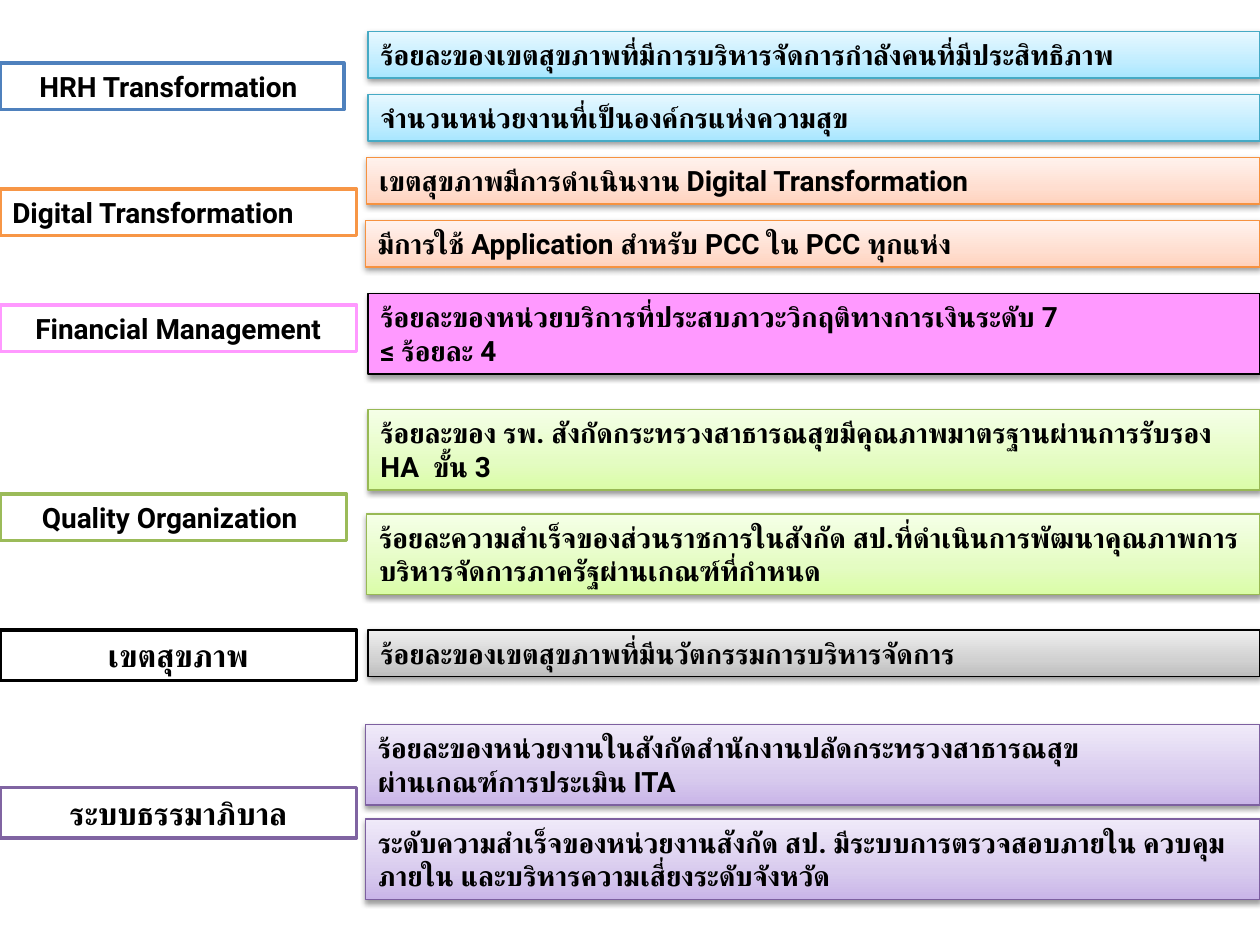
"""Build a slide that pairs management themes with their indicators."""
from copy import deepcopy

from lxml import etree
from pptx import Presentation
from pptx.dml.color import RGBColor
from pptx.enum import shapes, text
from pptx.oxml import ns
from pptx import util as u

WIDTH, HEIGHT = 10, 7.5
FONT = "Roboto"
BLACK, WHITE = "000000", "FFFFFF"
LEFT, CENTER = text.PP_ALIGN.LEFT, text.PP_ALIGN.CENTER
LINE_HEIGHT, PADDING = 0.27, 0.1

BLUE = ("A7E6FF", "C1EDFF", "E7F8FF")
ORANGE = ("FFD2BD", "FFDED0", "FFF2ED")
PINK = ("FF99FF",)
GREEN = ("DAFDA7", "E4FCC2", "F5FFE7")
GRAY = ("BDBDBD", "D1D1D1", "EEEEEE")
PURPLE = ("C9B5E8", "D8CBEE", "F0EAF9")
STOPS = (0, 0.35, 1)

# Theme: label, top, width, height, size, alignment, fill, line colour, line width
THEMES = [
    ("HRH Transformation ", 0.5, 2.73, 0.37, 16, CENTER, WHITE, "4F81BD", 2),
    ("Digital Transformation", 1.5, 2.83, 0.37, 16, LEFT, WHITE, "F79646", 2),
    ("Financial Management", 2.42, 2.83, 0.37, 16, CENTER, None, "FF99FF", 2.25),
    ("Quality Organization ", 3.92, 2.75, 0.37, 16, CENTER, WHITE, "9BBB59", 2),
    ("เขตสุขภาพ", 5, 2.83, 0.4, 18, CENTER, WHITE, BLACK, 2),
    ("ระบบธรรมาภิบาล", 6.25, 2.83, 0.4, 18, CENTER, WHITE, "8064A2", 2),
]

# Indicator: wording, left, top, rows of text, fill colours, line colour
INDICATORS = [
    ("ร้อยละของเขตสุขภาพที่มีการบริหารจัดการกำลังคนที่มีประสิทธิภาพ",
     2.92, 0.25, 1, BLUE, "46AAC5"),
    ("จำนวนหน่วยงานที่เป็นองค์กรแห่งความสุข", 2.92, 0.75, 1, BLUE, "46AAC5"),
    ("เขตสุขภาพมีการดำเนินงาน Digital Transformation",
     2.91, 1.25, 1, ORANGE, "F69240"),
    ("มีการใช้ Application สำหรับ PCC ใน PCC ทุกแห่ง",
     2.9, 1.75, 1, ORANGE, "F69240"),
    ("ร้อยละของหน่วยบริการที่ประสบภาวะวิกฤติทางการเงินระดับ 7\n≤ ร้อยละ 4",
     2.92, 2.33, 2, PINK, BLACK),
    ("ร้อยละของ รพ. สังกัดกระทรวงสาธารณสุขมีคุณภาพมาตรฐานผ่านการรับรอง HA  ขั้น 3",
     2.92, 3.25, 2, GREEN, "98B955"),
    ("ร้อยละความสำเร็จของส่วนราชการในสังกัด สป.ที่ดำเนินการพัฒนาคุณภาพการ"
     "บริหารจัดการภาครัฐผ่านเกณฑ์ที่กำหนด", 2.91, 4.08, 2, GREEN, "98B955"),
    ("ร้อยละของเขตสุขภาพที่มีนวัตกรรมการบริหารจัดการ",
     2.92, 5, 1, GRAY, BLACK),
    ("ร้อยละของหน่วยงานในสังกัดสำนักงานปลัดกระทรวงสาธารณสุข\n"
     "ผ่านเกณฑ์การประเมิน ITA", 2.9, 5.75, 2, PURPLE, "7D60A0"),
    ("ระดับความสำเร็จของหน่วยงานสังกัด สป. มีระบบการตรวจสอบภายใน ควบคุม"
     "ภายใน และบริหารความเสี่ยงระดับจังหวัด", 2.9, 6.5, 2, PURPLE, "7D60A0"),
]


def color(value):
    return RGBColor.from_string(value)


def add_child(parent, tag, **attributes):
    return etree.SubElement(parent, ns.qn(tag), attributes)


def paint(box, colors):
    if not colors:
        box.fill.background()
    elif len(colors) == 1:
        box.fill.solid()
        box.fill.fore_color.rgb = color(colors[0])
    else:
        box.fill.gradient()
        box.fill.gradient_angle = 90
        stop_list = box._element.spPr.find(".//" + ns.qn("a:gsLst"))
        stop_list.append(deepcopy(stop_list[-1]))
        for stop, position, value in zip(box.fill.gradient_stops, STOPS, colors):
            stop.position = position
            stop.color.rgb = color(value)


def add_shadow(box):
    effects = box._element.spPr.find(ns.qn("a:effectLst"))
    shadow = add_child(effects, "a:outerShdw", blurRad="40000", dist="20000",
                       dir="5400000", rotWithShape="0")
    shade = add_child(shadow, "a:srgbClr", val=BLACK)
    add_child(shade, "a:alpha", val="38000")


def add_box(page, place, wording, size, align, colors, line, line_width):
    box = page.shapes.add_shape(shapes.MSO_SHAPE.RECTANGLE, *map(u.Inches, place))
    box.shadow.inherit = False
    paint(box, colors)
    box.line.color.rgb = color(line)
    box.line.width = u.Pt(line_width)
    frame = box.text_frame
    frame.word_wrap = True
    frame.auto_size = text.MSO_AUTO_SIZE.SHAPE_TO_FIT_TEXT
    frame.vertical_anchor = text.MSO_ANCHOR.TOP
    frame.text = wording
    for para in frame.paragraphs:
        para.alignment = align
        for span in para.runs:
            span.font.size = u.Pt(size)
            span.font.bold = True
            span.font.name = FONT
            span.font.color.rgb = color(BLACK)
            add_child(span.font._element, "a:cs", typeface=FONT)
    return box


def main():
    deck = Presentation()
    deck.slide_width, deck.slide_height = u.Inches(WIDTH), u.Inches(HEIGHT)
    page = deck.slides.add_slide(deck.slide_layouts[6])
    for wording, left, top, rows, colors, line in INDICATORS:
        place = (left, top, WIDTH - left, PADDING + rows * LINE_HEIGHT)
        add_shadow(add_box(page, place, wording, 16, LEFT, colors, line, 0.75))
    for label, top, width, height, size, align, fill, line, line_width in THEMES:
        colors = (fill,) if fill else ()
        add_box(page, (0, top, width, height), label, size, align, colors,
                line, line_width)
    deck.save("out.pptx")


if __name__ == "__main__":
    main()
